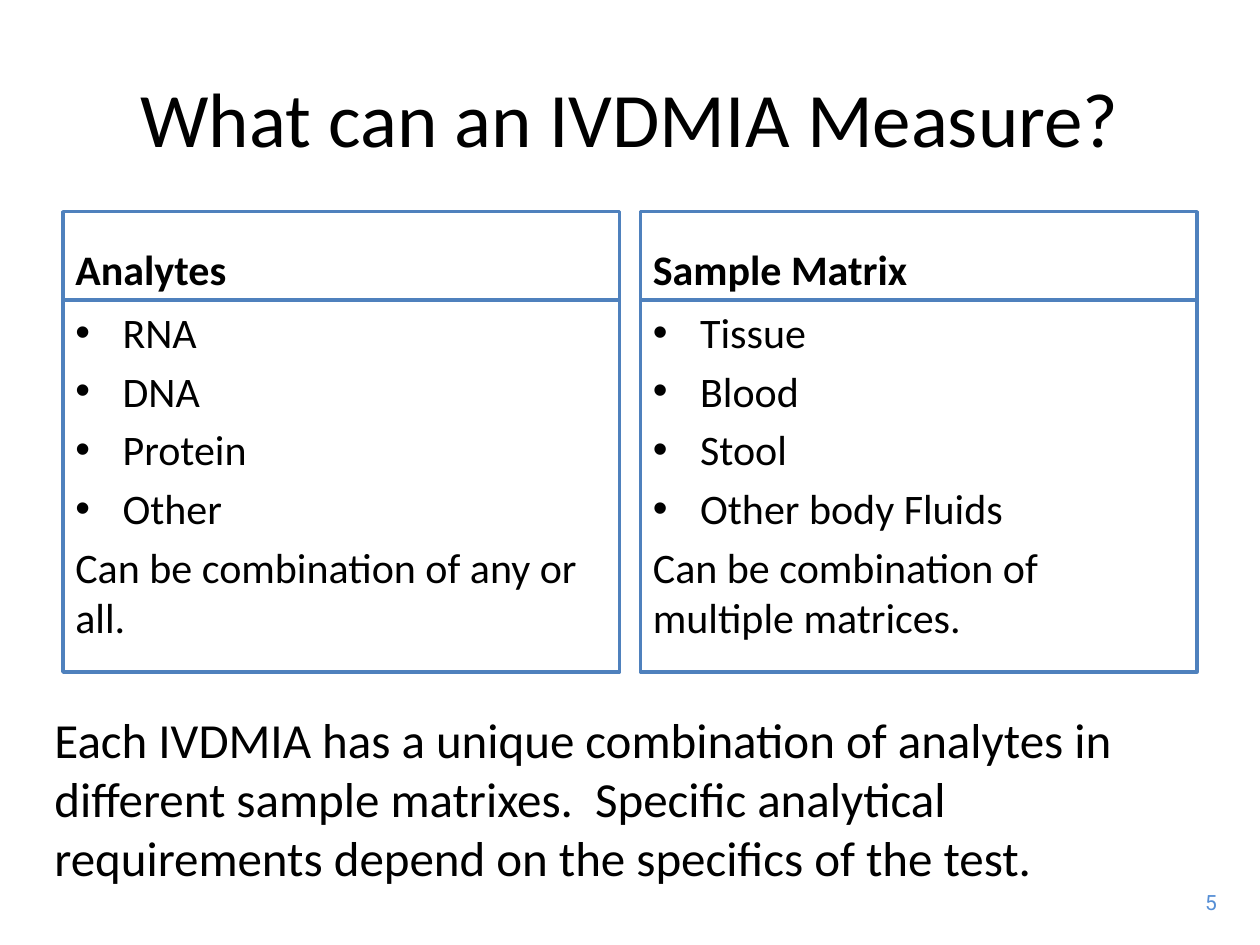
from lxml.etree import SubElement
from pptx import Presentation
from pptx.dml.color import RGBColor
from pptx.enum.shapes import MSO_SHAPE
from pptx.enum.text import MSO_ANCHOR, PP_ALIGN
from pptx.oxml.ns import qn
from pptx.util import Pt

COLORS = {"text": "000000", "panel": "FFFFFF", "border": "4F81BD", "number": "558ED5"}
FONT = "Calibri"
MARGIN, PANEL_W, PANEL_GAP = 36, 318, 12
HEAD_TOP, HEAD_H, BODY_H = 121, 50.5, 212.5
INDENT = 27

PANELS = [
    ("Analytes", ["RNA", "DNA", "Protein", "Other"],
     "Can be combination of any or all."),
    ("Sample Matrix", ["Tissue", "Blood", "Stool", "Other body Fluids"],
     "Can be combination of multiple matrices."),
]
SUMMARY = ("Each IVDMIA has a unique combination of analytes in different sample "
           "matrixes.  Specific analytical requirements depend on the specifics of the test.")


def color(name):
    return RGBColor.from_string(COLORS[name])


def add_run(p, text, size, bold=False, font=FONT, fill="text"):
    r = p.add_run()
    r.text = text
    r.font.name, r.font.size, r.font.bold = font, Pt(size), bold
    r.font.color.rgb = color(fill)


def add_bullet(p):
    pPr = p._p.get_or_add_pPr()
    pPr.set("marL", str(Pt(INDENT)))
    pPr.set("indent", str(-Pt(INDENT)))
    SubElement(pPr, qn("a:buFont")).set("typeface", "Arial")
    SubElement(pPr, qn("a:buChar")).set("char", "•")


def add_title(s, text):
    sp = s.shapes.title
    sp.left, sp.top, sp.width, sp.height = Pt(MARGIN), Pt(21.6), Pt(648), Pt(90)
    tf = sp.text_frame
    tf.vertical_anchor = MSO_ANCHOR.MIDDLE
    p = tf.paragraphs[0]
    p.alignment = PP_ALIGN.CENTER
    add_run(p, text, 44)


def add_box(s, left, top, height, anchor):
    sp = s.shapes.add_shape(MSO_SHAPE.RECTANGLE, Pt(left), Pt(top), Pt(PANEL_W), Pt(height))
    sp.shadow.inherit = False
    sp.fill.solid()
    sp.fill.fore_color.rgb = color("panel")
    sp.line.color.rgb = color("border")
    sp.line.width = Pt(2)
    tf = sp.text_frame
    tf.word_wrap = True
    tf.vertical_anchor = anchor
    tf.paragraphs[0].alignment = PP_ALIGN.LEFT
    return tf


def add_panel(s, left, heading, items, note):
    # Heading box
    tf = add_box(s, left, HEAD_TOP, HEAD_H, MSO_ANCHOR.BOTTOM)
    add_run(tf.paragraphs[0], heading, 24, bold=True)

    # Bulleted list with a closing note
    tf = add_box(s, left, HEAD_TOP + HEAD_H, BODY_H, MSO_ANCHOR.TOP)
    for i, text in enumerate(items + [note]):
        p = tf.add_paragraph() if i else tf.paragraphs[0]
        p.alignment = PP_ALIGN.LEFT
        if i:
            p.space_before = Pt(4.8)
        if i < len(items):
            add_bullet(p)
        add_run(p, text, 24)


def add_text(s, left, top, width, height, text, size, align=PP_ALIGN.LEFT, **style):
    tf = s.shapes.add_textbox(Pt(left), Pt(top), Pt(width), Pt(height)).text_frame
    tf.word_wrap = True
    p = tf.paragraphs[0]
    p.alignment = align
    add_run(p, text, size, **style)


def main():
    prs = Presentation()
    prs.slide_width, prs.slide_height = Pt(720), Pt(540)
    s = prs.slides.add_slide(prs.slide_layouts[5])

    add_title(s, "What can an IVDMIA Measure?")

    # Side-by-side panels
    for i, panel in enumerate(PANELS):
        add_panel(s, MARGIN + i * (PANEL_W + PANEL_GAP), *panel)

    # Summary and slide number
    add_text(s, 24, 402, 660, 108.5, SUMMARY, 28)
    add_text(s, 673, 505, 29.5, 21.5, "5", 12, PP_ALIGN.RIGHT, font="Roboto", fill="number")

    prs.save("out.pptx")


if __name__ == "__main__":
    main()
